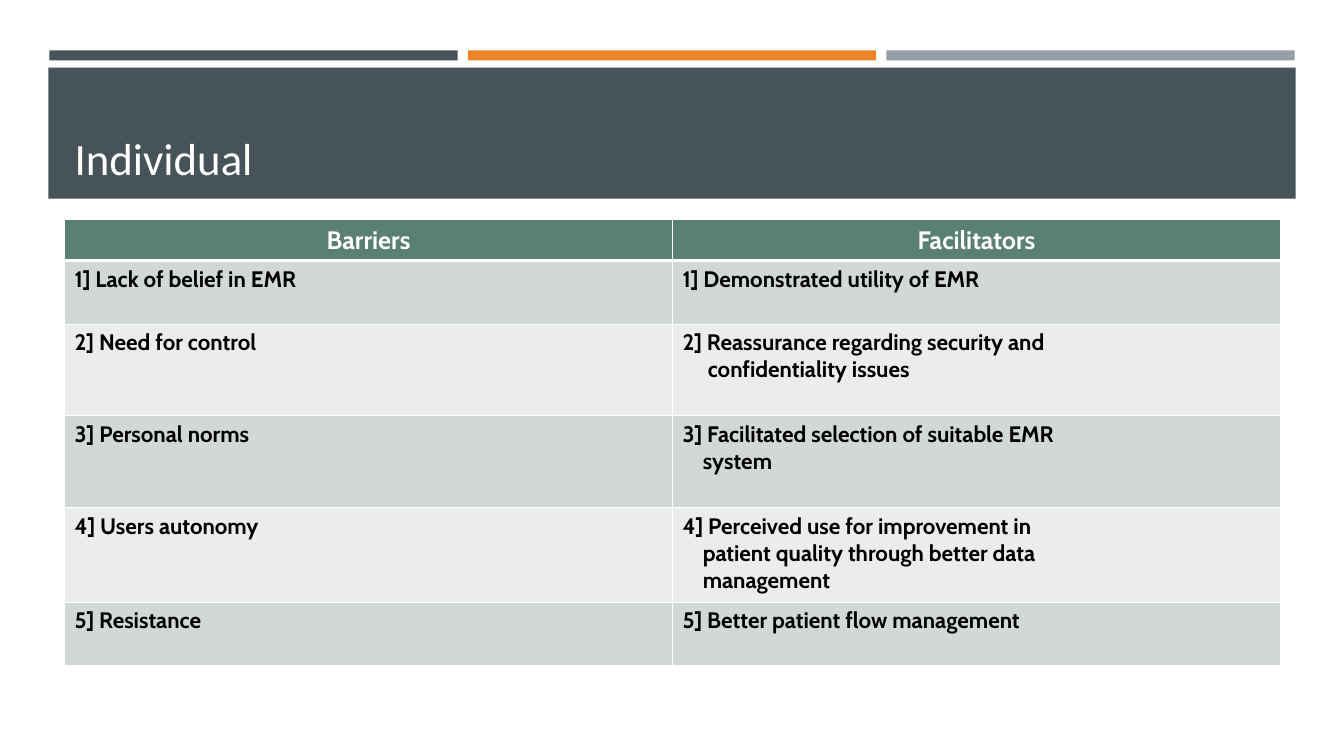
from lxml import etree
from pptx import Presentation
from pptx.dml.color import RGBColor
from pptx.enum.shapes import MSO_SHAPE
from pptx.enum.text import MSO_ANCHOR, MSO_AUTO_SIZE, PP_ALIGN
from pptx.oxml.ns import qn
from pptx.util import Pt

RECTANGLE = MSO_SHAPE.RECTANGLE
LEFT, CENTER = PP_ALIGN.LEFT, PP_ALIGN.CENTER
TOP, BOTTOM = MSO_ANCHOR.TOP, MSO_ANCHOR.BOTTOM
NO_AUTOFIT = MSO_AUTO_SIZE.NONE

SLATE = RGBColor(0x46, 0x53, 0x59)
ORANGE = RGBColor(0xED, 0x84, 0x28)
GRAY = RGBColor(0x96, 0x9F, 0xA7)
GREEN = RGBColor(0x5A, 0x80, 0x71)
DARK_BAND = RGBColor(0xD2, 0xD8, 0xD5)
LIGHT_BAND = RGBColor(0xEA, 0xED, 0xEB)
WHITE = RGBColor(0xFF, 0xFF, 0xFF)
BLACK = RGBColor(0x00, 0x00, 0x00)

EMU_PER_PX = 9144
TITLE_ONLY = 5

TITLE_FONT = {"name": "Calibri", "size": Pt(32), "bold": False}
HEADER_FONT = {"name": "Cabin", "size": Pt(18), "bold": True}
BODY_FONT = {"name": "Cabin", "size": Pt(16), "bold": True}

ROW_HEIGHTS = [37, 63, 91, 91, 94, 63]
ROWS = [
    (["Barriers"], ["Facilitators"], 0),
    (["1] Lack of belief in EMR"], ["1] Demonstrated utility of EMR"], 0),
    (["2] Need for control"],
     ["2] Reassurance regarding security and", "confidentiality issues"], 25),
    (["3] Personal norms"],
     ["3] Facilitated selection of suitable EMR", "system"], 20),
    (["4] Users autonomy"],
     ["4] Perceived use for improvement in",
      "patient quality through better data", "management"], 20),
    (["5] Resistance"], ["5] Better patient flow management"], 0),
]


def px(length):
    return length * EMU_PER_PX


def set_attributes(target, values):
    for name, value in values.items():
        setattr(target, name, value)


class SlideBuilder:
    def __init__(self, presentation):
        layout = presentation.slide_layouts[TITLE_ONLY]
        self.slide = presentation.slides.add_slide(layout)
        self.shapes = self.slide.shapes

    def bar(self, left, top, width, height, color):
        shape = self.shapes.add_shape(
            RECTANGLE, px(left), px(top), px(width), px(height))
        shape.shadow.inherit = False
        shape.fill.solid()
        shape.fill.fore_color.rgb = color
        shape.line.fill.background()

    def paragraph(self, paragraph, text, font, color, alignment, indent=0):
        paragraph.alignment = alignment
        if indent:
            paragraph._p.get_or_add_pPr().set("marL", str(px(indent)))
        run = paragraph.add_run()
        run.text = text
        set_attributes(run.font, font)
        run.font.color.rgb = color

    def title(self, left, top, width, height, text):
        title = self.shapes.title
        title._element.getparent().append(title._element)
        set_attributes(title, {"left": px(left), "top": px(top),
                               "width": px(width), "height": px(height)})
        frame = title.text_frame
        set_attributes(frame, {"word_wrap": True, "auto_size": NO_AUTOFIT,
                               "vertical_anchor": BOTTOM})
        self.paragraph(frame.paragraphs[0], text, TITLE_FONT, WHITE, LEFT)

    def borders(self, cell, top_width, bottom_width):
        properties = cell._tc.get_or_add_tcPr()
        widths = {"a:lnL": 1, "a:lnR": 1,
                  "a:lnT": top_width, "a:lnB": bottom_width}
        for side, width in widths.items():
            line = etree.SubElement(properties, qn(side), w=str(Pt(width)))
            fill = etree.SubElement(line, qn("a:solidFill"))
            etree.SubElement(fill, qn("a:srgbClr"), val=str(WHITE))

    def cell(self, cell, row, lines, indent):
        is_header = row == 0
        self.borders(cell, 3 if row == 1 else 1, 3 if is_header else 1)
        cell.fill.solid()
        if is_header:
            fill, style = GREEN, (HEADER_FONT, WHITE, CENTER)
        else:
            fill = DARK_BAND if row % 2 else LIGHT_BAND
            style = (BODY_FONT, BLACK, LEFT)
        cell.fill.fore_color.rgb = fill
        cell.vertical_anchor = TOP
        frame = cell.text_frame
        for number, line in enumerate(lines):
            paragraph = frame.add_paragraph() if number else frame.paragraphs[0]
            self.paragraph(paragraph, line, *style, indent if number else 0)

    def table(self, left, top, width, heights, rows):
        table = self.shapes.add_table(
            len(rows), 2, px(left), px(top), px(width), px(sum(heights))).table
        for row, (barrier, facilitator, indent) in enumerate(rows):
            table.rows[row].height = px(heights[row])
            for column, lines in enumerate((barrier, facilitator)):
                self.cell(table.cell(row, column), row, lines, indent)


def main():
    presentation = Presentation()
    presentation.slide_width = px(1333)
    presentation.slide_height = px(750)
    builder = SlideBuilder(presentation)
    for number, color in enumerate((SLATE, ORANGE, GRAY)):
        builder.bar(49 + 415 * number, 50, 405, 10, color)
    builder.bar(48, 67, 1237, 130, SLATE)
    builder.title(64, 77, 1206, 111, "Individual")
    builder.table(64, 218, 1206, ROW_HEIGHTS, ROWS)
    presentation.save("out.pptx")


if __name__ == "__main__":
    main()
